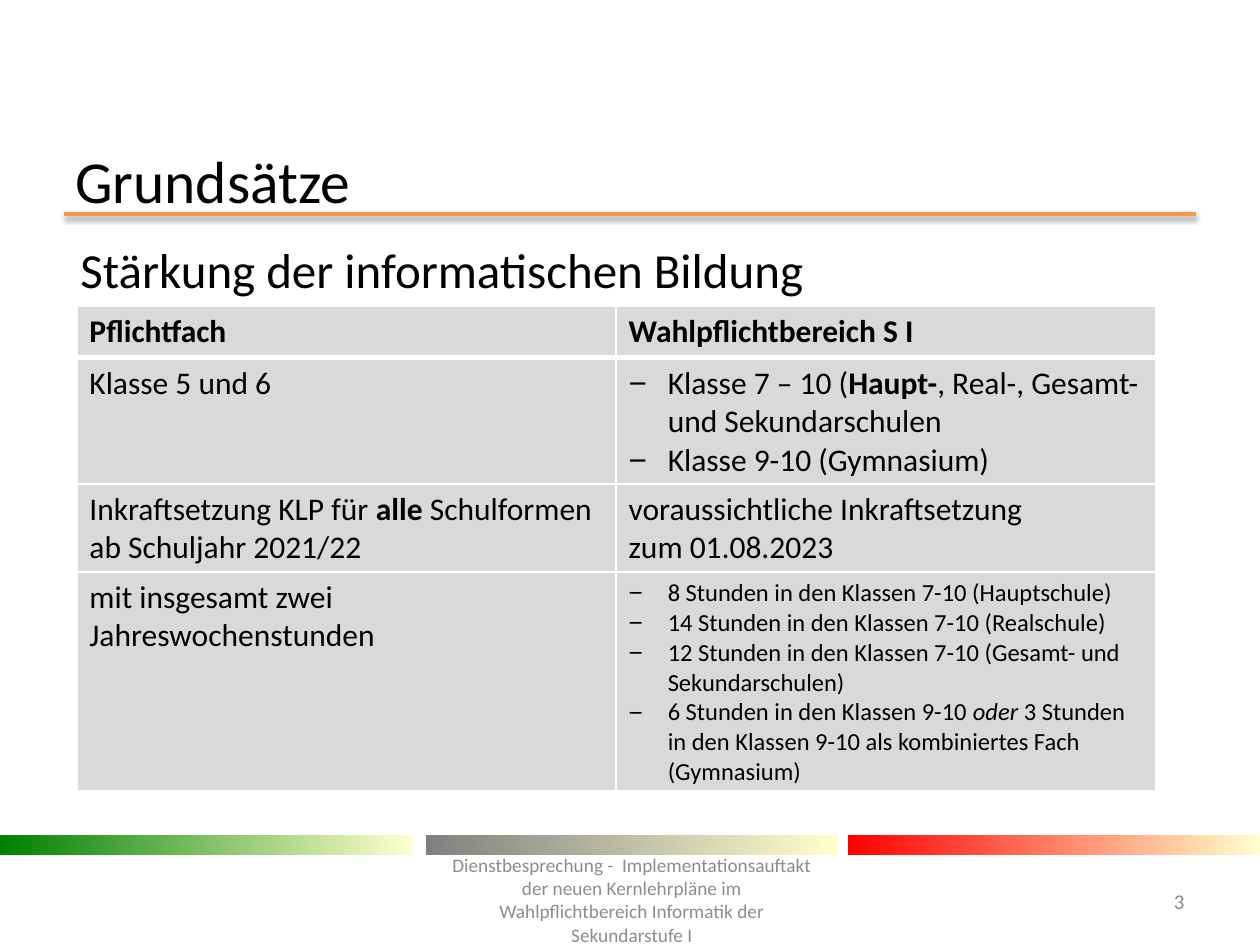
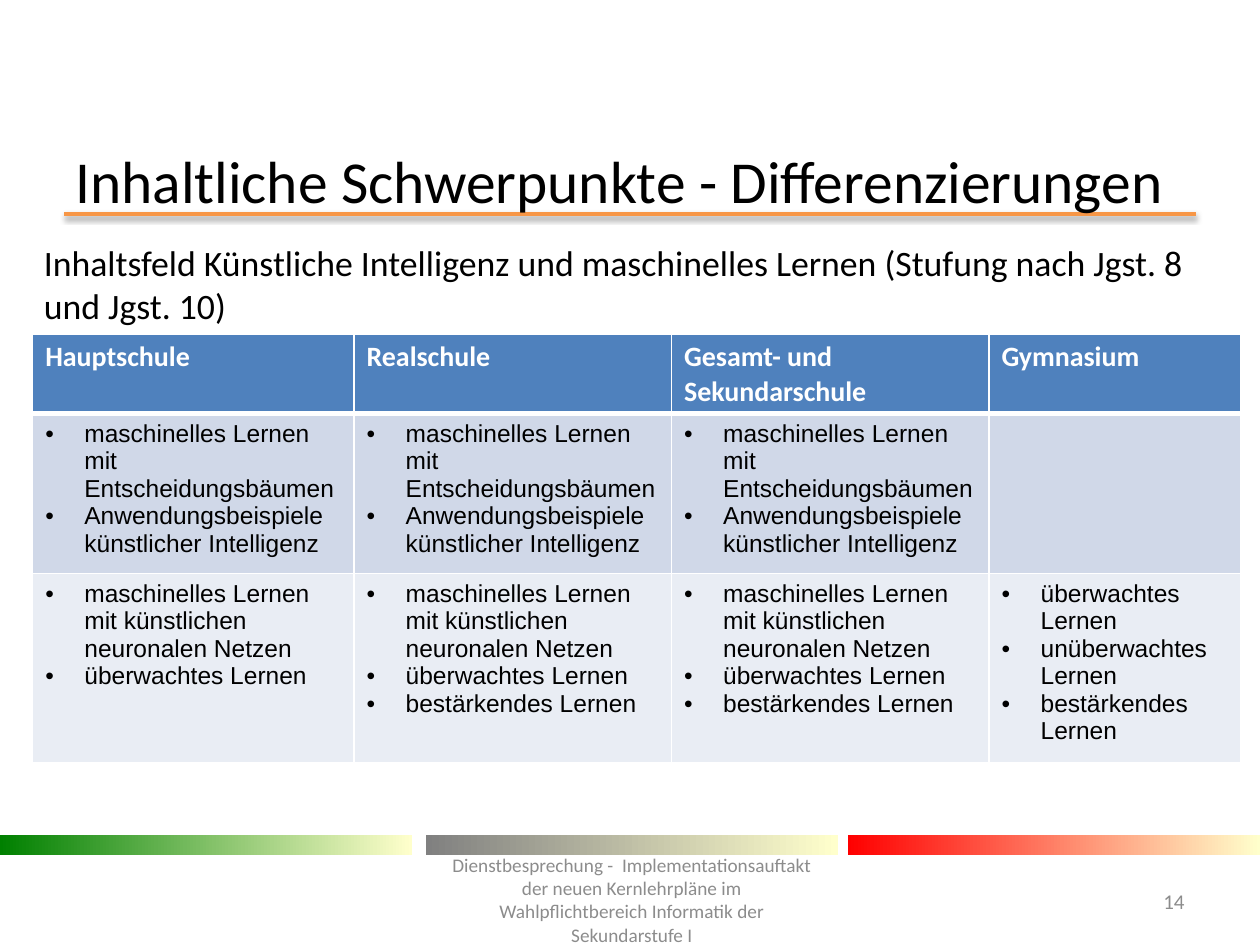
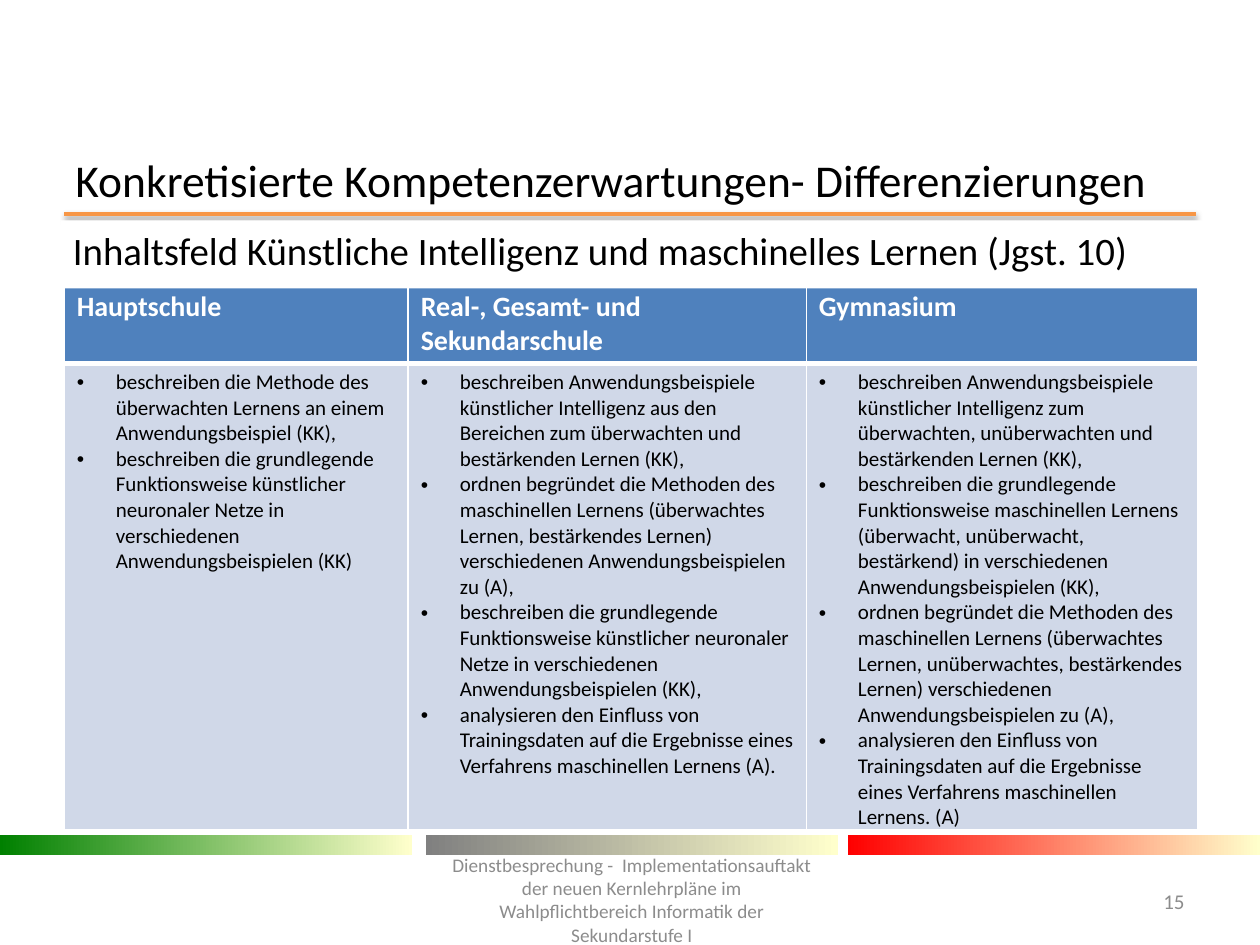
"""Builds three slides on the new computer science curricula with python-pptx."""
from dataclasses import dataclass

from lxml.etree import SubElement
from pptx import Presentation
from pptx.dml.color import RGBColor
from pptx.enum.shapes import MSO_CONNECTOR, MSO_SHAPE
from pptx.enum.text import MSO_ANCHOR, PP_ALIGN
from pptx.oxml.ns import qn
from pptx.util import Inches, Pt

COLORS = {
    "black": "000000",
    "white": "FFFFFF",
    "footer": "8C8C8C",
    "rule": "F79646",
    "green": "008000",
    "gray": "808080",
    "red": "FF0000",
    "cream": "FFFFCC",
    "neutral": "D9D9D9",
    "header": "4F81BD",
    "row_dark": "D0D8E8",
    "row_light": "E9EDF4",
}
FONT = "Calibri"
FOOTER = (
    "Dienstbesprechung -  Implementationsauftakt der neuen Kernlehrpläne im "
    "Wahlpflichtbereich Informatik der Sekundarstufe I"
)
BULLET_INDENT = Inches(0.31)


@dataclass(frozen=True)
class Box:
    left: float
    top: float
    width: float
    height: float

    def lengths(self) -> tuple:
        return tuple(Inches(value) for value in (self.left, self.top, self.width, self.height))


@dataclass(frozen=True)
class Style:
    size: float
    color: str = "black"
    bold: bool = False
    font: str = FONT
    align: PP_ALIGN = PP_ALIGN.LEFT


@dataclass(frozen=True)
class Band:
    left: float
    color: str


@dataclass(frozen=True)
class Span:
    text: str
    bold: bool = False
    italic: bool = False


@dataclass(frozen=True)
class Cell:
    paragraphs: tuple
    style: Style
    bullet: str = ""


@dataclass(frozen=True)
class Grid:
    left: float
    top: float
    columns: tuple
    rows: tuple
    fills: tuple
    cells: tuple


@dataclass(frozen=True)
class Page:
    number: int
    title: str
    title_size: float
    subtitle: str
    subtitle_size: float
    subtitle_box: Box
    grid: Grid
    subtitle_in_front: bool = True


BANDS = (Band(0, "green"), Band(3.38, "gray"), Band(6.73, "red"))
TITLE_BOX = Box(0.5, 1.23, 9, 0.39)
NUMBER_BOX = Box(8.86, 6.95, 0.64, 0.4)
FOOTER_BOX = Box(3.48, 6.8, 3.07, 0.68)
NUMBER_STYLE = Style(12, "footer", align=PP_ALIGN.RIGHT)
FOOTER_STYLE = Style(11, "footer", align=PP_ALIGN.CENTER)
BODY = Style(18)
HEADER = Style(16, "white", bold=True)
TOPIC = Style(14, font="Arial")
COMPETENCE = Style(12)


def rgb(name: str) -> RGBColor:
    return RGBColor.from_string(COLORS[name])


def header_row(*labels: str, style: Style = HEADER) -> tuple:
    return tuple(Cell((label,), style) for label in labels)


def topics(*items: str) -> Cell:
    return Cell(items, TOPIC, "•")


def competences(*items: str) -> Cell:
    return Cell(items, COMPETENCE, "•")


def format_font(font, style: Style) -> None:
    font.name = style.font
    font.size = Pt(style.size)
    font.bold = style.bold
    font.color.rgb = rgb(style.color)


def add_text(slide, box: Box, text: str, style: Style,
             anchor: MSO_ANCHOR = MSO_ANCHOR.MIDDLE):
    shape = slide.shapes.add_textbox(*box.lengths())
    text_frame = shape.text_frame
    text_frame.word_wrap = True
    text_frame.vertical_anchor = anchor
    text_frame.text = text
    paragraph = text_frame.paragraphs[0]
    paragraph.alignment = style.align
    format_font(paragraph.runs[0].font, style)
    return shape


def add_rule(slide) -> None:
    connector = slide.shapes.add_connector(
        MSO_CONNECTOR.STRAIGHT, Inches(0.51), Inches(1.7), Inches(9.49), Inches(1.7))
    connector.line.color.rgb = rgb("rule")
    connector.line.width = Pt(2)
    effects = SubElement(connector._element.spPr, qn("a:effectLst"))
    shadow = SubElement(effects, qn("a:outerShdw"), blurRad=str(Pt(3.1)), dist=str(Pt(1.6)),
                        dir="5400000", rotWithShape="0")
    color = SubElement(shadow, qn("a:srgbClr"), val=COLORS["black"])
    SubElement(color, qn("a:alpha"), val="38000")


def add_band(slide, band: Band) -> None:
    shape = slide.shapes.add_shape(
        MSO_SHAPE.RECTANGLE, *Box(band.left, 6.63, 3.27, 0.16).lengths())
    shape.shadow.inherit = False
    shape.line.fill.background()
    shape.fill.gradient()
    shape.fill.gradient_angle = 0
    for stop, color in zip(shape.fill.gradient_stops, (band.color, "cream")):
        stop.color.rgb = rgb(color)


def set_bullet(paragraph, character: str) -> None:
    properties = paragraph._p.get_or_add_pPr()
    properties.set("marL", str(BULLET_INDENT))
    properties.set("indent", str(-BULLET_INDENT))
    SubElement(properties, qn("a:buFont"), typeface="Arial")
    SubElement(properties, qn("a:buChar"), char=character)


def set_borders(table_cell, row: int) -> None:
    properties = table_cell._tc.get_or_add_tcPr()
    widths = {"lnL": 1, "lnR": 1, "lnT": 3 if row == 1 else 1, "lnB": 3 if row == 0 else 1}
    for tag, width in widths.items():
        line = SubElement(properties, qn(f"a:{tag}"), w=str(Pt(width)))
        fill = SubElement(line, qn("a:solidFill"))
        SubElement(fill, qn("a:srgbClr"), val=COLORS["white"])


def fill_cell(table_cell, cell: Cell) -> None:
    text_frame = table_cell.text_frame
    for index, content in enumerate(cell.paragraphs):
        paragraph = text_frame.add_paragraph() if index else text_frame.paragraphs[0]
        if cell.bullet:
            set_bullet(paragraph, cell.bullet)
        spans = (Span(content, cell.style.bold),) if isinstance(content, str) else content
        for span in spans:
            run = paragraph.add_run()
            run.text = span.text
            format_font(run.font, cell.style)
            run.font.bold = span.bold
            run.font.italic = span.italic


def add_grid(slide, grid: Grid) -> None:
    box = Box(grid.left, grid.top, sum(grid.columns), sum(grid.rows))
    table = slide.shapes.add_table(
        len(grid.rows), len(grid.columns), *box.lengths()).table
    table.horz_banding = False
    for column, width in zip(table.columns, grid.columns):
        column.width = Inches(width)
    for row, height in enumerate(grid.rows):
        table.rows[row].height = Inches(height)
        for column, cell in enumerate(grid.cells[row]):
            table_cell = table.cell(row, column)
            set_borders(table_cell, row)
            table_cell.fill.solid()
            table_cell.fill.fore_color.rgb = rgb(grid.fills[row])
            fill_cell(table_cell, cell)


def add_subtitle(slide, page: Page) -> None:
    shape = add_text(slide, page.subtitle_box, page.subtitle,
                     Style(page.subtitle_size), MSO_ANCHOR.TOP)
    shape.fill.solid()
    shape.fill.fore_color.rgb = rgb("white")


def add_page(presentation, page: Page) -> None:
    slide = presentation.slides.add_slide(presentation.slide_layouts[6])
    add_rule(slide)
    for band in BANDS:
        add_band(slide, band)
    add_text(slide, TITLE_BOX, page.title, Style(page.title_size))
    add_text(slide, NUMBER_BOX, str(page.number), NUMBER_STYLE)
    if page.subtitle_in_front:
        add_grid(slide, page.grid)
        add_subtitle(slide, page)
    else:
        add_subtitle(slide, page)
        add_grid(slide, page.grid)
    add_text(slide, FOOTER_BOX, FOOTER, FOOTER_STYLE)


PRINCIPLES = Grid(
    0.61, 2.43, (4.28, 4.28), (0.41, 1, 0.7, 1.73), ("neutral",) * 4,
    (
        header_row("Pflichtfach", "Wahlpflichtbereich S I", style=Style(18, bold=True)),
        (
            Cell(("Klasse 5 und 6",), BODY),
            Cell((
                (Span("Klasse 7 – 10 ("), Span("Haupt-", bold=True),
                 Span(", Real-, Gesamt- und Sekundarschulen")),
                "Klasse 9-10 (Gymnasium)",
            ), BODY, "−"),
        ),
        (
            Cell(((Span("Inkraftsetzung KLP für "), Span("alle ", bold=True),
                   Span("Schulformen ab Schuljahr 2021/22")),), BODY),
            Cell(("voraussichtliche Inkraftsetzung", "zum 01.08.2023"), BODY),
        ),
        (
            Cell(("mit insgesamt zwei Jahreswochenstunden",), BODY),
            Cell((
                "8 Stunden in den Klassen 7-10 (Hauptschule)",
                "14 Stunden in den Klassen 7-10 (Realschule)",
                "12 Stunden in den Klassen 7-10 (Gesamt- und Sekundarschulen)",
                (Span("6 Stunden in den Klassen 9-10 "), Span("oder ", italic=True),
                 Span("3 Stunden in den Klassen 9-10 als kombiniertes Fach (Gymnasium)")),
            ), Style(14), "−"),
        ),
    ),
)

DECISION_TREES = topics("maschinelles Lernen mit Entscheidungsbäumen",
                        "Anwendungsbeispiele künstlicher Intelligenz")
NEURAL_NETWORKS = ("maschinelles Lernen mit künstlichen neuronalen Netzen",
                   "überwachtes Lernen")
REINFORCEMENT = "bestärkendes Lernen"
FOCUS_TOPICS = Grid(
    0.26, 2.65, (2.55, 2.52, 2.52, 2), (0.57, 1.14, 1.46),
    ("header", "row_dark", "row_light"),
    (
        header_row("Hauptschule", "Realschule", "Gesamt- und Sekundarschule", "Gymnasium"),
        (DECISION_TREES,) * 3 + (topics(),),
        (
            topics(*NEURAL_NETWORKS),
            topics(*NEURAL_NETWORKS, REINFORCEMENT),
            topics(*NEURAL_NETWORKS, REINFORCEMENT),
            topics("überwachtes Lernen", "unüberwachtes Lernen", REINFORCEMENT),
        ),
    ),
)

EXPECTATIONS = Grid(
    0.51, 2.25, (2.73, 3.16, 3.11), (0.62, 3.48), ("header", "row_dark"),
    (
        header_row("Hauptschule", "Real-, Gesamt- und Sekundarschule", "Gymnasium"),
        (
            competences(
                "beschreiben die Methode des überwachten Lernens an einem "
                "Anwendungsbeispiel (KK),",
                "beschreiben die grundlegende Funktionsweise künstlicher neuronaler Netze "
                "in verschiedenen Anwendungsbeispielen (KK)",
            ),
            competences(
                "beschreiben Anwendungsbeispiele künstlicher Intelligenz aus den Bereichen "
                "zum überwachten und bestärkenden Lernen (KK),",
                "ordnen begründet die Methoden des maschinellen Lernens (überwachtes Lernen, "
                "bestärkendes Lernen) verschiedenen Anwendungsbeispielen zu (A),",
                "beschreiben die grundlegende Funktionsweise künstlicher neuronaler Netze "
                "in verschiedenen Anwendungsbeispielen (KK),",
                "analysieren den Einfluss von Trainingsdaten auf die Ergebnisse eines "
                "Verfahrens maschinellen Lernens (A).",
            ),
            competences(
                "beschreiben Anwendungsbeispiele künstlicher Intelligenz zum überwachten, "
                "unüberwachten und bestärkenden Lernen (KK),",
                "beschreiben die grundlegende Funktionsweise maschinellen Lernens "
                "(überwacht, unüberwacht, bestärkend) in verschiedenen "
                "Anwendungsbeispielen (KK),",
                "ordnen begründet die Methoden des maschinellen Lernens (überwachtes Lernen, "
                "unüberwachtes, bestärkendes Lernen) verschiedenen "
                "Anwendungsbeispielen zu (A),",
                "analysieren den Einfluss von Trainingsdaten auf die Ergebnisse eines "
                "Verfahrens maschinellen Lernens. (A)",
            ),
        ),
    ),
)

PAGES = (
    Page(3, "Grundsätze", 34, "Stärkung der informatischen Bildung", 28,
         Box(0.54, 1.85, 9, 0.71), PRINCIPLES, subtitle_in_front=False),
    Page(14, "Inhaltliche Schwerpunkte - Differenzierungen", 34,
         "Inhaltsfeld Künstliche Intelligenz und maschinelles Lernen "
         "(Stufung nach Jgst. 8 und Jgst. 10)", 20.4,
         Box(0.25, 1.86, 9.59, 0.67), FOCUS_TOPICS),
    Page(15, "Konkretisierte Kompetenzerwartungen- Differenzierungen", 26,
         "Inhaltsfeld Künstliche Intelligenz und maschinelles Lernen (Jgst. 10)", 22.2,
         Box(0.48, 1.75, 9.25, 0.54), EXPECTATIONS),
)


def main() -> None:
    presentation = Presentation()
    presentation.slide_width = Inches(10)
    presentation.slide_height = Inches(7.5)
    for page in PAGES:
        add_page(presentation, page)
    presentation.save("out.pptx")


if __name__ == "__main__":
    main()
